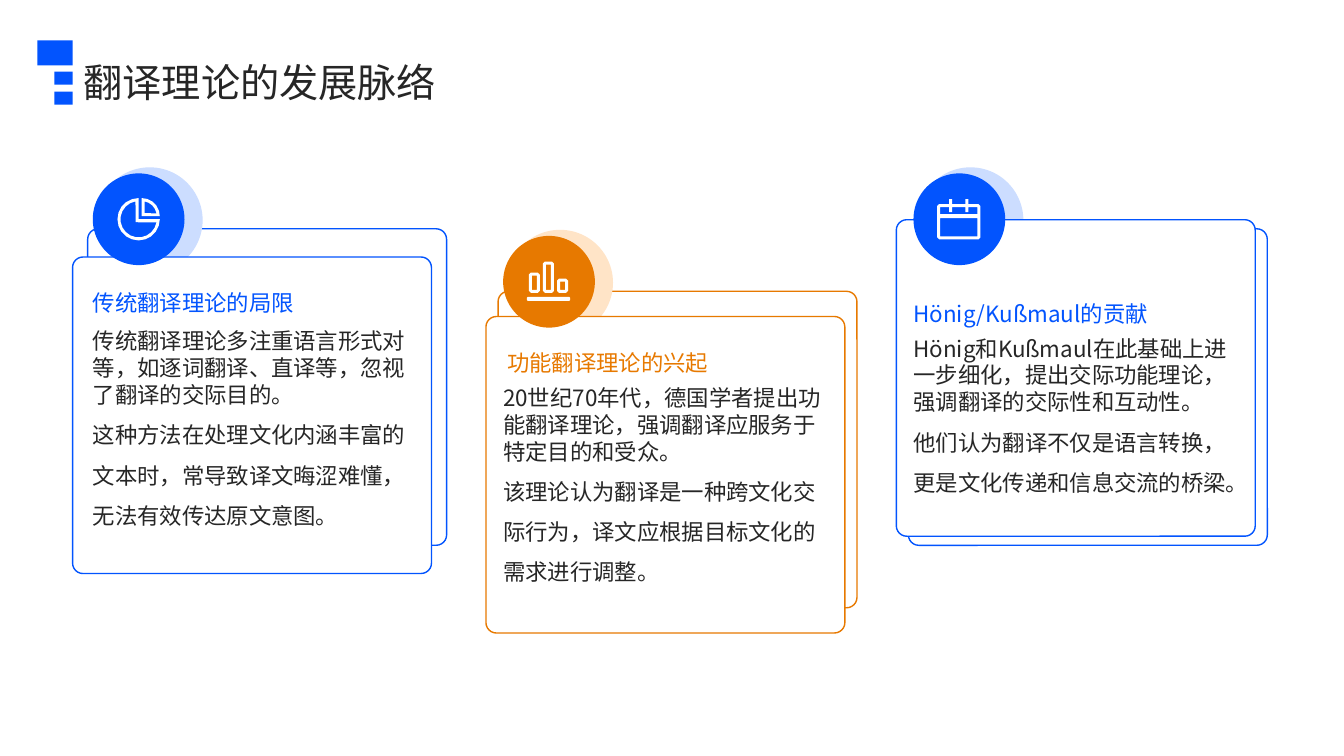
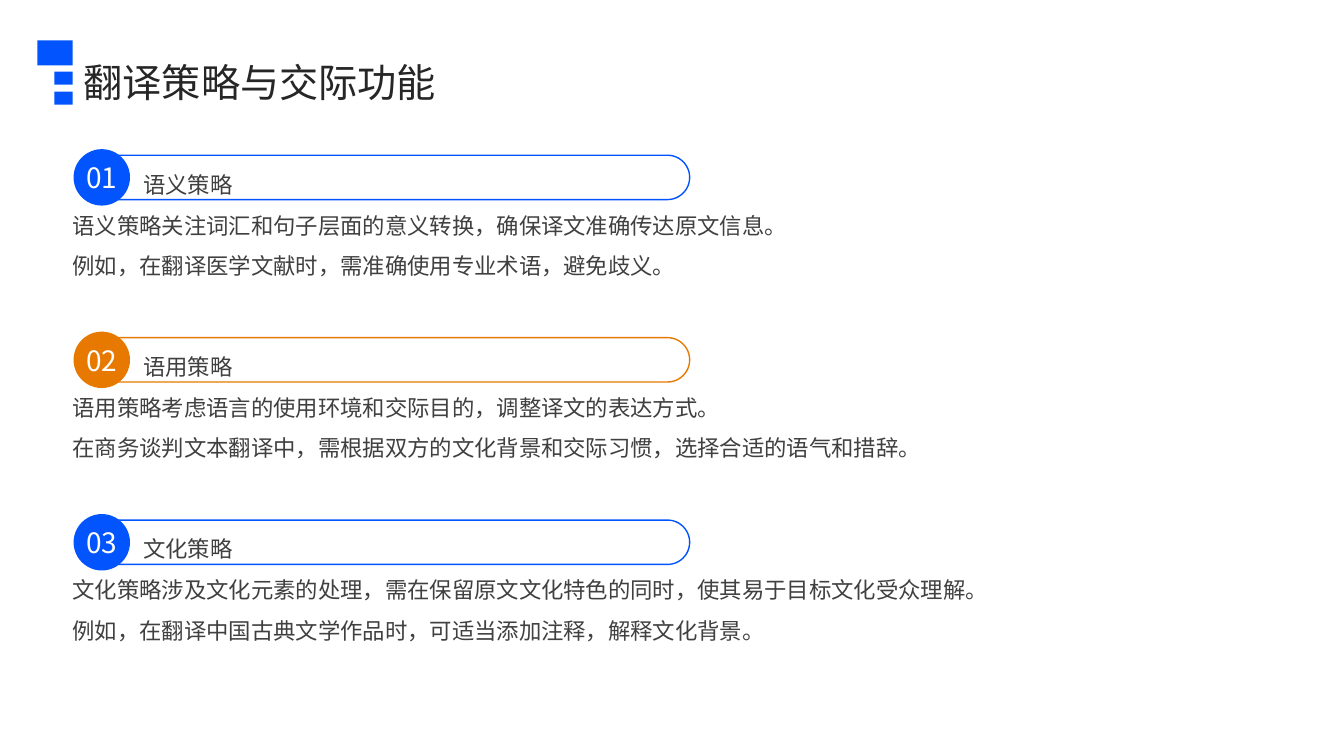
from math import ceil, cos, radians, sin

from lxml.etree import SubElement
from pptx import Presentation
from pptx.dml.color import RGBColor
from pptx.enum.shapes import MSO_SHAPE
from pptx.enum.text import MSO_ANCHOR, MSO_AUTO_SIZE, PP_ALIGN
from pptx.oxml.ns import qn
from pptx.util import Inches, Pt

FONT = "Noto Sans CJK SC"
BLUE = RGBColor(0x02, 0x54, 0xFE)
PALE_BLUE = RGBColor(0xCC, 0xDD, 0xFF)
ORANGE = RGBColor(0xE7, 0x79, 0x00)
PALE_ORANGE = RGBColor(0xFF, 0xE4, 0xC7)
WHITE = RGBColor(0xFF, 0xFF, 0xFF)
INK = RGBColor(0x26, 0x26, 0x26)
GREY = RGBColor(0x40, 0x40, 0x40)

TITLE_BLOCKS = [(0.37, 0.40, 0.35, 0.25), (0.54, 0.71, 0.18, 0.13), (0.54, 0.91, 0.18, 0.13)]
BADGE_SIZE = 0.91
CARD_SIZE = (3.56, 3.14)
CARD_TEXT_WIDTH = 3.22
CARD_LEFT, CARD_PITCH = 0.92, 4.07
ROW_TOP, ROW_PITCH = 1.48, 1.81


def paint(shape, fill=None, line=None):
    shape.shadow.inherit = False
    if fill is None:
        shape.fill.background()
    else:
        shape.fill.solid()
        shape.fill.fore_color.rgb = fill
    if line is None:
        shape.line.fill.background()
    else:
        shape.line.color.rgb = line
        shape.line.width = Pt(1)


def add_figure(slide, preset, box, fill=None, line=None, corner=None):
    shape = slide.shapes.add_shape(preset, *map(Inches, box))
    if corner is not None:
        shape.adjustments[0] = corner
    paint(shape, fill, line)
    return shape


def write(shape, text, size, color, spacing=1.0, anchor=MSO_ANCHOR.TOP, align=PP_ALIGN.LEFT):
    """Fill a shape with one paragraph for each line of the text."""
    frame = shape.text_frame
    frame.word_wrap = True
    frame.auto_size = MSO_AUTO_SIZE.NONE
    frame.vertical_anchor = anchor
    frame.margin_left = frame.margin_top = frame.margin_right = frame.margin_bottom = 0
    frame.text = text
    for paragraph in frame.paragraphs:
        paragraph.alignment = align
        paragraph.line_spacing = spacing
        for run in paragraph.runs:
            run.font.name = FONT
            run.font.size = Pt(size)
            run.font.color.rgb = color
            SubElement(run.font._element, qn("a:ea"), typeface=FONT)


def add_text(slide, box, text, size, color, spacing, anchor=MSO_ANCHOR.TOP):
    text_box = slide.shapes.add_textbox(*map(Inches, box))
    write(text_box, text, size, color, spacing, anchor)
    return text_box


def add_body(slide, box, text, color):
    """Add a tightly set statement followed by a loosely set explanation."""
    body = add_text(slide, box, text, 16, color, 1.5)
    statement = body.text_frame.paragraphs[0]
    statement.line_spacing = 1.0
    statement._p.get_or_add_pPr().set("hangingPunct", "0")


def add_titled_slide(prs, title):
    slide = prs.slides.add_slide(prs.slide_layouts[5])
    heading = slide.shapes.title
    heading.left, heading.top = Inches(0.83), Inches(0.53)
    heading.width, heading.height = Inches(11.88), Inches(0.51)
    write(heading, title, 28, INK, 1.1, MSO_ANCHOR.MIDDLE)
    for block in TITLE_BLOCKS:
        add_figure(slide, MSO_SHAPE.RECTANGLE, block, BLUE)
    return slide


def arc(cx, cy, radius, start, end):
    """Points of an arc, in degrees clockwise from the right."""
    steps = ceil((end - start) / 18)
    angles = [radians(start + (end - start) * i / steps) for i in range(steps + 1)]
    return [(cx + radius * cos(a), cy + radius * sin(a)) for a in angles]


def box_outline(x, y, width, height, cut=0):
    """Corners of a box, each cut off by the given length."""
    right, bottom = x + width, y + height
    if not cut:
        return [(x, y), (right, y), (right, bottom), (x, bottom)]
    return [(x + cut, y), (right - cut, y), (right, y + cut), (right, bottom - cut),
            (right - cut, bottom), (x + cut, bottom), (x, bottom - cut), (x, y + cut)]


def pie_outlines():
    return [
        arc(0, 0, 0.21, 0, 270) + [(0, 0)],
        arc(0, 0, 0.18, 10, 260) + [(-0.03, 0.03)],
        arc(0.03, -0.03, 0.18, 270, 360) + [(0.03, -0.03)],
        arc(0.03, -0.03, 0.15, 281, 349) + [(0.06, -0.06)],
    ]


def bars_outlines():
    outlines = [box_outline(-0.22, 0.15, 0.43, 0.04, 0.01)]
    for x, height in [(-0.20, 0.20), (-0.06, 0.31), (0.08, 0.14)]:
        top = 0.11 - height
        outlines.append(box_outline(x, top, 0.11, height, 0.02))
        outlines.append(box_outline(x + 0.03, top + 0.03, 0.05, height - 0.06))
    return outlines


def calendar_outlines():
    outlines = [
        box_outline(-0.22, -0.15, 0.43, 0.35, 0.02),
        box_outline(-0.19, -0.12, 0.37, 0.07),
        box_outline(-0.19, -0.01, 0.37, 0.18),
    ]
    for x in (-0.10, 0.06):
        for y in (-0.20, -0.12):
            outlines.append(box_outline(x, y, 0.03, 0.05))
    return outlines


def add_icon(slide, cx, cy, outlines):
    """Draw outlines given around (cx, cy); inner outlines become holes."""
    builder = None
    for outline in outlines:
        points = [(Inches(cx + x), Inches(cy + y)) for x, y in outline]
        if builder is None:
            builder = slide.shapes.build_freeform(*points[0])
        else:
            builder.move_to(*points[0])
        builder.add_line_segments(points[1:], close=True)
    paint(builder.convert_to_shape(), WHITE)


def add_theory_card(slide, left, top, card):
    """Place one card; left and top are those of its round badge."""
    color, front_offset = card["color"], card["front"]
    back_box = (left - 0.05, top + 0.55, *CARD_SIZE)
    front_box = (left + front_offset[0], top + front_offset[1], *CARD_SIZE)
    add_figure(slide, MSO_SHAPE.ROUNDED_RECTANGLE, back_box, WHITE, color, 0.033)
    add_figure(slide, MSO_SHAPE.OVAL, (left + 0.04, top - 0.06, 1.05, 1.05), card["halo"])
    add_figure(slide, MSO_SHAPE.ROUNDED_RECTANGLE, front_box, WHITE, color, 0.033)

    heading_x, heading_y = card["heading_at"]
    add_text(slide, (left + heading_x, top + heading_y, CARD_TEXT_WIDTH, 0.74),
             card["heading"], 16, color, 1.3, MSO_ANCHOR.BOTTOM)
    add_body(slide, (left, top + card["body_y"], CARD_TEXT_WIDTH, 1.6), card["body"], INK)

    add_figure(slide, MSO_SHAPE.OVAL, (left, top, BADGE_SIZE, BADGE_SIZE), color)
    add_icon(slide, left + BADGE_SIZE / 2, top + BADGE_SIZE / 2, card["icon"])


def add_strategy_row(slide, left, top, number, color, name, body):
    """Place one row; left and top are those of its number circle."""
    add_figure(slide, MSO_SHAPE.ROUNDED_RECTANGLE, (left + 0.06, top + 0.06, 6.05, 0.44),
               line=color, corner=0.5)
    circle = add_figure(slide, MSO_SHAPE.OVAL, (left, top, 0.56, 0.56), color)
    write(circle, f"{number:02}", 20, WHITE, anchor=MSO_ANCHOR.MIDDLE, align=PP_ALIGN.CENTER)
    add_text(slide, (left + 0.69, top + 0.12, 5.2, 0.32), name, 16, GREY, 1.5,
             MSO_ANCHOR.MIDDLE)
    add_body(slide, (left - 0.01, top + 0.62, 11.88, 0.92), body, GREY)


def build_theory_slide(prs):
    slide = add_titled_slide(prs, "翻译理论的发展脉络")
    cards = [
        {"top": 1.72, "color": BLUE, "halo": PALE_BLUE, "icon": pie_outlines(),
         "front": (-0.20, 0.83), "heading_at": (0, 0.67), "body_y": 1.53,
         "heading": "传统翻译理论的局限",
         "body": "传统翻译理论多注重语言形式对等，如逐词翻译、直译等，忽视了翻译的交际目的。\n"
                 "这种方法在处理文化内涵丰富的文本时，常导致译文晦涩难懂，无法有效传达原文意图。"},
        {"top": 2.34, "color": ORANGE, "halo": PALE_ORANGE, "icon": bars_outlines(),
         "front": (-0.17, 0.80), "heading_at": (0.04, 0.65), "body_y": 1.47,
         "heading": "功能翻译理论的兴起",
         "body": "20世纪70年代，德国学者提出功能翻译理论，强调翻译应服务于特定目的和受众。\n"
                 "该理论认为翻译是一种跨文化交际行为，译文应根据目标文化的需求进行调整。"},
        {"top": 1.72, "color": BLUE, "halo": PALE_BLUE, "icon": calendar_outlines(),
         "front": (-0.17, 0.46), "heading_at": (0, 0.78), "body_y": 1.60,
         "heading": "Hönig/Kußmaul的贡献",
         "body": "Hönig和Kußmaul在此基础上进一步细化，提出交际功能理论，强调翻译的交际性和互动性。\n"
                 "他们认为翻译不仅是语言转换，更是文化传递和信息交流的桥梁。"},
    ]
    for column, card in enumerate(cards):
        add_theory_card(slide, CARD_LEFT + column * CARD_PITCH, card["top"], card)


def build_strategy_slide(prs):
    slide = add_titled_slide(prs, "翻译策略与交际功能")
    strategies = [
        (BLUE, "语义策略",
         "语义策略关注词汇和句子层面的意义转换，确保译文准确传达原文信息。\n"
         "例如，在翻译医学文献时，需准确使用专业术语，避免歧义。"),
        (ORANGE, "语用策略",
         "语用策略考虑语言的使用环境和交际目的，调整译文的表达方式。\n"
         "在商务谈判文本翻译中，需根据双方的文化背景和交际习惯，选择合适的语气和措辞。"),
        (BLUE, "文化策略",
         "文化策略涉及文化元素的处理，需在保留原文文化特色的同时，使其易于目标文化受众理解。\n"
         "例如，在翻译中国古典文学作品时，可适当添加注释，解释文化背景。"),
    ]
    for row, strategy in enumerate(strategies):
        add_strategy_row(slide, 0.73, ROW_TOP + row * ROW_PITCH, row + 1, *strategy)


def main():
    prs = Presentation()
    prs.slide_width, prs.slide_height = Inches(13.33), Inches(7.5)
    build_theory_slide(prs)
    build_strategy_slide(prs)
    prs.save("out.pptx")


if __name__ == "__main__":
    main()
